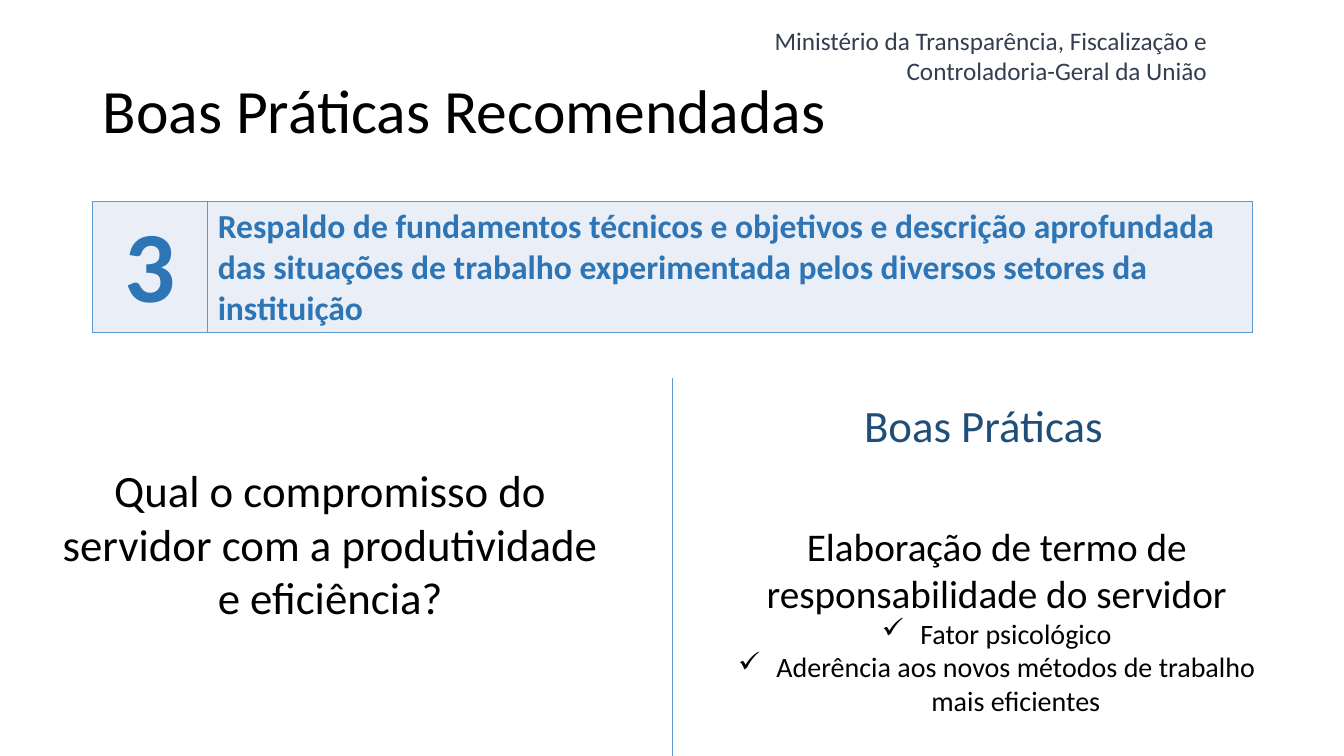
from dataclasses import dataclass

from lxml.etree import SubElement
from pptx import Presentation
from pptx.dml.color import RGBColor
from pptx.enum.shapes import MSO_CONNECTOR
from pptx.enum.text import MSO_ANCHOR, PP_ALIGN
from pptx.oxml.ns import qn
from pptx.util import Inches, Pt


@dataclass(frozen=True)
class Theme:
    font: str = "Calibri"
    ink: str = "000000"
    slate: str = "333F50"
    navy: str = "1F4E79"
    blue: str = "2E75B6"
    edge: str = "5B9BD5"
    pale: str = "EAEFF7"
    small: int = 18
    item: int = 20
    point: int = 24
    body: int = 28
    head: int = 32
    title: int = 44
    giant: int = 72


class Deck:
    def __init__(self, theme):
        self.theme = theme
        self.file = Presentation()
        self.file.slide_width = Inches(13.33)
        self.file.slide_height = Inches(7.5)
        self.slide = self.file.slides.add_slide(self.file.slide_layouts[6])

    def style(self, para, size, color, align, bold=False):
        para.alignment = align
        for run in para.runs:
            font = run.font
            font.name = self.theme.font
            font.size = Pt(size)
            font.bold = bold
            font.color.rgb = RGBColor.from_string(color)

    def text(self, words, area, size, color, align=PP_ALIGN.CENTER, anchor=MSO_ANCHOR.TOP):
        box = self.slide.shapes.add_textbox(*map(Inches, area))
        frame = box.text_frame
        frame.word_wrap = True
        frame.vertical_anchor = anchor
        frame.text = words
        self.style(frame.paragraphs[0], size, color, align)
        return frame

    def bullet(self, frame, words):
        para = frame.add_paragraph()
        para.text = words
        props = para._p.get_or_add_pPr()
        props.set("marL", str(Inches(0.38)))
        props.set("indent", str(-Inches(0.38)))
        SubElement(props, qn("a:buChar")).set("char", "✓")
        self.style(para, self.theme.item, self.theme.ink, PP_ALIGN.CENTER)

    def border(self, cell):
        props = cell._tc.get_or_add_tcPr()
        for place, side in enumerate(("lnL", "lnR", "lnT", "lnB")):
            line = SubElement(props, qn(f"a:{side}"))
            line.set("w", str(Pt(1)))
            fill = SubElement(line, qn("a:solidFill"))
            SubElement(fill, qn("a:srgbClr")).set("val", self.theme.edge)
            props.insert(place, line)

    def table(self, items, area, widths):
        frame = self.slide.shapes.add_table(1, len(items), *map(Inches, area))
        grid = frame.table
        grid.first_row = grid.horz_banding = False
        for col, (words, size, align, anchor) in enumerate(items):
            grid.columns[col].width = Inches(widths[col])
            cell = grid.cell(0, col)
            cell.fill.solid()
            cell.fill.fore_color.rgb = RGBColor.from_string(self.theme.pale)
            cell.vertical_anchor = anchor
            cell.text_frame.text = words
            self.style(cell.text_frame.paragraphs[0], size, self.theme.blue, align, True)
            self.border(cell)

    def line(self, start, end):
        rule = self.slide.shapes.add_connector(
            MSO_CONNECTOR.STRAIGHT, *map(Inches, (*start, *end)))
        rule.line.color.rgb = RGBColor.from_string(self.theme.edge)
        rule.line.width = Pt(0.5)
        SubElement(rule._element.spPr, qn("a:effectLst"))


def main():
    theme = Theme()
    deck = Deck(theme)
    deck.text("Ministério da Transparência, Fiscalização e Controladoria-Geral da União",
              (7.51, 0.2, 4.56, 0.71), theme.small, theme.slate, PP_ALIGN.RIGHT)
    title = deck.text("Boas Práticas Recomendadas", (0.92, 0.4, 11.5, 1.45),
                      theme.title, theme.ink, PP_ALIGN.LEFT, MSO_ANCHOR.MIDDLE)
    title.paragraphs[0].line_spacing = 0.9
    deck.table([
        ("3", theme.giant, PP_ALIGN.CENTER, MSO_ANCHOR.TOP),
        ("Respaldo de fundamentos técnicos e objetivos e descrição aprofundada das "
         "situações de trabalho experimentada pelos diversos setores da instituição",
         theme.point, PP_ALIGN.LEFT, MSO_ANCHOR.MIDDLE),
    ], (0.92, 2, 11.5, 1.3), (1.14, 10.36))
    deck.text("Qual o compromisso do servidor com a produtividade e eficiência?",
              (0.38, 4.54, 5.79, 1.72), theme.head, theme.ink)
    advice = deck.text("Elaboração de termo de responsabilidade do servidor",
                       (6.99, 5.13, 5.79, 2.05), theme.body, theme.ink)
    for words in ("Fator psicológico",
                  "Aderência aos novos métodos de trabalho mais eficientes"):
        deck.bullet(advice, words)
    deck.text("Boas Práticas", (6.86, 3.9, 5.79, 0.64), theme.head, theme.navy)
    deck.line((6.67, 3.75), (6.67, 7.5))
    deck.file.save("out.pptx")


if __name__ == "__main__":
    main()
